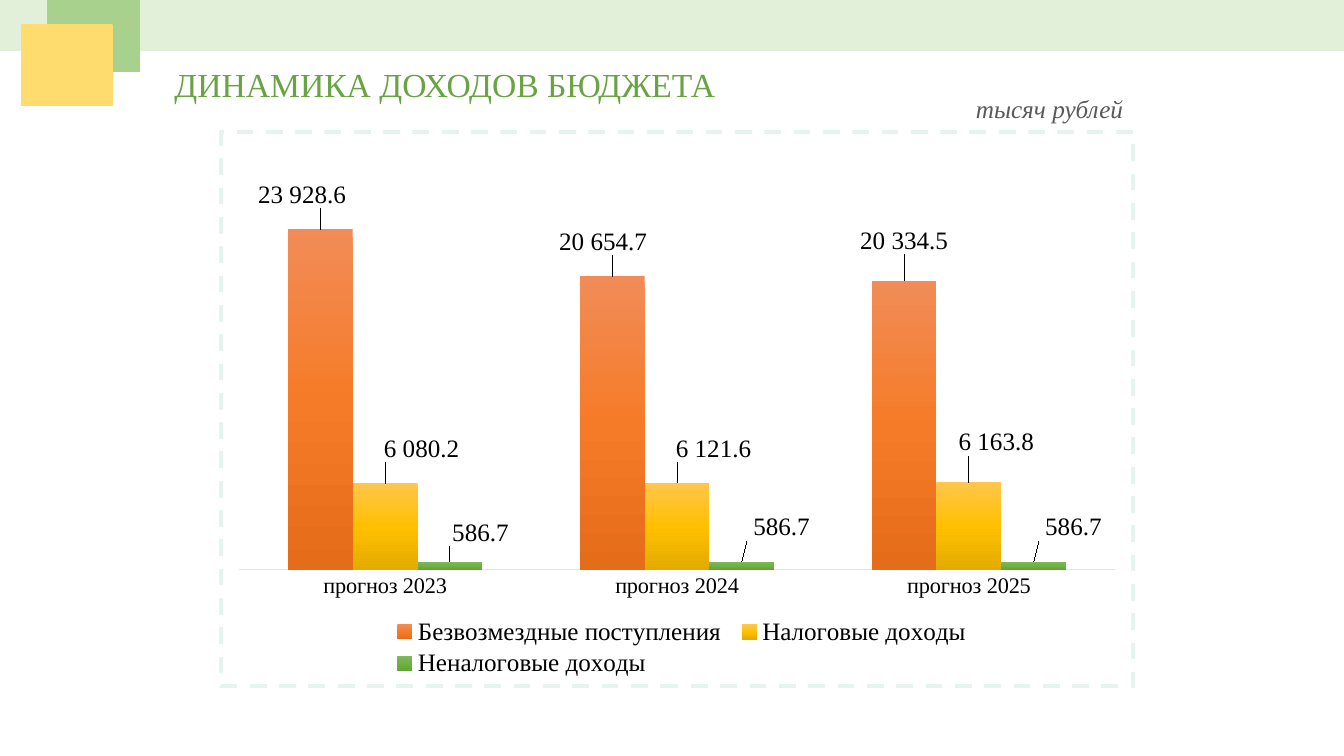
from lxml.etree import fromstring
from pptx import Presentation
from pptx.chart.data import CategoryChartData
from pptx.dml.color import RGBColor
from pptx.enum.chart import XL_CHART_TYPE, XL_LABEL_POSITION, XL_LEGEND_POSITION, XL_TICK_MARK
from pptx.enum.shapes import MSO_SHAPE
from pptx.enum.text import MSO_ANCHOR, MSO_AUTO_SIZE, PP_ALIGN
from pptx.oxml.ns import nsdecls, qn
from pptx.util import Inches, Pt

BLACK = RGBColor(0x00, 0x00, 0x00)
GREY = RGBColor(0x59, 0x59, 0x59)
RULE = RGBColor(0xE0, 0xE5, 0xEB)
MINT = RGBColor(0xE3, 0xF5, 0xED)
LEAF = RGBColor(0x6A, 0xA3, 0x43)
PALE = RGBColor(0xE2, 0xF0, 0xD9)
GREEN = RGBColor(0xA9, 0xD1, 0x8E)
GOLD = RGBColor(0xFF, 0xDC, 0x6D)
RAMPS = [
    (RGBColor(0xF1, 0x8C, 0x57), RGBColor(0xF6, 0x7B, 0x28), RGBColor(0xE5, 0x6C, 0x19)),
    (RGBColor(0xFF, 0xC6, 0x4B), RGBColor(0xFF, 0xC0, 0x00), RGBColor(0xE3, 0xAB, 0x00)),
    (RGBColor(0x81, 0xB8, 0x61), RGBColor(0x6F, 0xB2, 0x42), RGBColor(0x62, 0xA3, 0x36)),
]
FORMAT = "#\\ ##0.0"
YEARS = ["прогноз 2023", "прогноз 2024", "прогноз 2025"]
INCOME = {
    "Безвозмездные поступления": (23928.6, 20654.7, 20334.5),
    "Налоговые доходы": (6080.2, 6121.6, 6163.8),
    "Неналоговые доходы": (586.7, 586.7, 586.7),
}
SHIFTS = [
    [(-0.02, -0.03), (-0.01, -0.03), (0, -0.04)],
    [(0.04, -0.03), (0.04, -0.03), (0.03, -0.04)],
    [(0.03, -0.02), (0.04, -0.03), (0.04, -0.03)],
]


def put(target, **values):
    """Set every given attribute on the target."""
    for name, value in values.items():
        setattr(target, name, value)


def place(parent, after=None, inner=False, **shares):
    """Give a chart part a manual layout in shares of the chart."""
    for old in parent.findall(qn("c:layout")):
        parent.remove(old)
    rows = '<c:layoutTarget val="inner"/>' if inner else ""
    if "w" in shares:
        rows += '<c:xMode val="edge"/><c:yMode val="edge"/>'
    rows += "".join(f'<c:{key} val="{value}"/>' for key, value in shares.items())
    layout = fromstring(f'<c:layout {nsdecls("c")}><c:manualLayout>{rows}</c:manualLayout></c:layout>')
    if after:
        parent.find(qn(after)).addnext(layout)
    else:
        parent.insert(0, layout)


class Deck:
    """Holds the text style and the current slide, measured in percent."""

    face = "Times New Roman"

    def __init__(self):
        self.show = Presentation()
        put(self.show, slide_width=Inches(13.33), slide_height=Inches(7.5))
        self.slide = self.show.slides.add_slide(self.show.slide_layouts[5])

    def frame(self, left, top, width, height):
        """Turn percent of the slide into lengths."""
        wide, high = self.show.slide_width / 100, self.show.slide_height / 100
        return [int(left * wide), int(top * high), int(width * wide), int(height * high)]

    def style(self, font, size, color=BLACK, **more):
        """Format a font in the deck's face."""
        put(font, **{"name": self.face, "size": Pt(size), **more})
        font.color.rgb = color

    def label(self, shape, text, size, color, **more):
        """Fill a shape with one styled line."""
        body = shape.text_frame
        body.text = text
        put(body, word_wrap=False, auto_size=MSO_AUTO_SIZE.SHAPE_TO_FIT_TEXT,
            vertical_anchor=MSO_ANCHOR.TOP)
        line = body.paragraphs[0]
        line.alignment = PP_ALIGN.LEFT
        self.style(line.runs[0].font, size, color, **more)

    def title(self, text, *area):
        """Move and fill the title placeholder."""
        shape = self.slide.shapes.title
        put(shape, **dict(zip(("left", "top", "width", "height"), self.frame(*area))))
        self.label(shape, text, 24, LEAF)

    def note(self, text, *area):
        """Add an italic text box."""
        box = self.slide.shapes.add_textbox(*self.frame(*area))
        self.label(box, text, 18, GREY, italic=True)

    def block(self, color, *area):
        """Add a plain rectangle."""
        shape = self.slide.shapes.add_shape(MSO_SHAPE.RECTANGLE, *self.frame(*area))
        shape.shadow.inherit = False
        shape.fill.solid()
        shape.fill.fore_color.rgb = color
        shape.line.color.rgb = color
        shape.line.width = Pt(1)

    def chart(self, *area):
        """Add the column chart of income."""
        data = CategoryChartData(number_format=FORMAT)
        data.categories = YEARS
        for name, values in INCOME.items():
            data.add_series(name, values)
        kind = XL_CHART_TYPE.COLUMN_CLUSTERED
        chart = self.slide.shapes.add_chart(kind, *self.frame(*area), data).chart
        put(chart, has_title=False, has_legend=True)
        self.style(chart.font, 10, name="Calibri")
        put(chart.legend, position=XL_LEGEND_POSITION.BOTTOM, include_in_layout=False)
        self.style(chart.legend.font, 18)
        put(chart.value_axis, visible=False, has_major_gridlines=False,
            minimum_scale=0, maximum_scale=30000)
        years = chart.category_axis
        put(years, major_tick_mark=XL_TICK_MARK.NONE, minor_tick_mark=XL_TICK_MARK.NONE)
        self.style(years.tick_labels.font, 16)
        years.format.line.color.rgb = RULE
        years.format.line.width = Pt(0.75)
        plot = chart.plots[0]
        put(plot, gap_width=150, overlap=0, vary_by_categories=False)
        root = chart.element
        for bars, node, ramp, shifts in zip(plot.series, root.iter(qn("c:ser")), RAMPS, SHIFTS):
            self.bars(bars, node, ramp, shifts)
        place(root.find(".//" + qn("c:plotArea")), inner=True, x=0.02, y=0.02, w=0.96, h=0.77)
        place(root.find(".//" + qn("c:legend")), "c:legendPos", x=0.18, y=0.87, w=0.65, h=0.12)
        root.find(qn("c:chart")).addnext(fromstring(
            f'<c:spPr {nsdecls("c", "a")}><a:noFill/><a:ln w="{Pt(3)}"><a:solidFill>'
            f'<a:srgbClr val="{MINT}"/></a:solidFill><a:prstDash val="dash"/></a:ln></c:spPr>'))

    def bars(self, bars, node, ramp, shifts):
        """Shade one series and shift its labels."""
        stops = "".join(f'<a:gs pos="{spot * 50000}"><a:srgbClr val="{color}"/></a:gs>'
                        for spot, color in enumerate(ramp))
        bars.format.fill.background()
        blank = node.find(qn("c:spPr") + "/" + qn("a:noFill"))
        blank.getparent().replace(blank, fromstring(
            f'<a:gradFill {nsdecls("a")}><a:gsLst>{stops}</a:gsLst>'
            '<a:lin ang="5400000" scaled="0"/></a:gradFill>'))
        labels = bars.data_labels
        put(labels, show_value=True, number_format=FORMAT, number_format_is_linked=False,
            position=XL_LABEL_POSITION.OUTSIDE_END)
        self.style(labels.font, 18)
        for spot in range(len(shifts)):
            label = bars.points[spot].data_label
            self.style(label.font, 18)
            label.position = XL_LABEL_POSITION.OUTSIDE_END
        for mark, (x, y) in zip(node.iter(qn("c:dLbl")), shifts):
            place(mark, "c:idx", x=x, y=y)


def main():
    """Build and save the slide."""
    deck = Deck()
    deck.title("ДИНАМИКА ДОХОДОВ БЮДЖЕТА", 12.23, 7.73, 42.16, 6.67)
    deck.block(PALE, 0, 0, 100, 6.67)
    deck.block(GREEN, 3.53, 0, 6.83, 9.47)
    deck.block(GOLD, 1.58, 3.33, 6.75, 10.67)
    deck.chart(16.28, 17.2, 68.19, 73.87)
    deck.note("тысяч рублей", 71.87, 11.73, 12.6, 5.33)
    deck.show.save("out.pptx")


if __name__ == "__main__":
    main()
